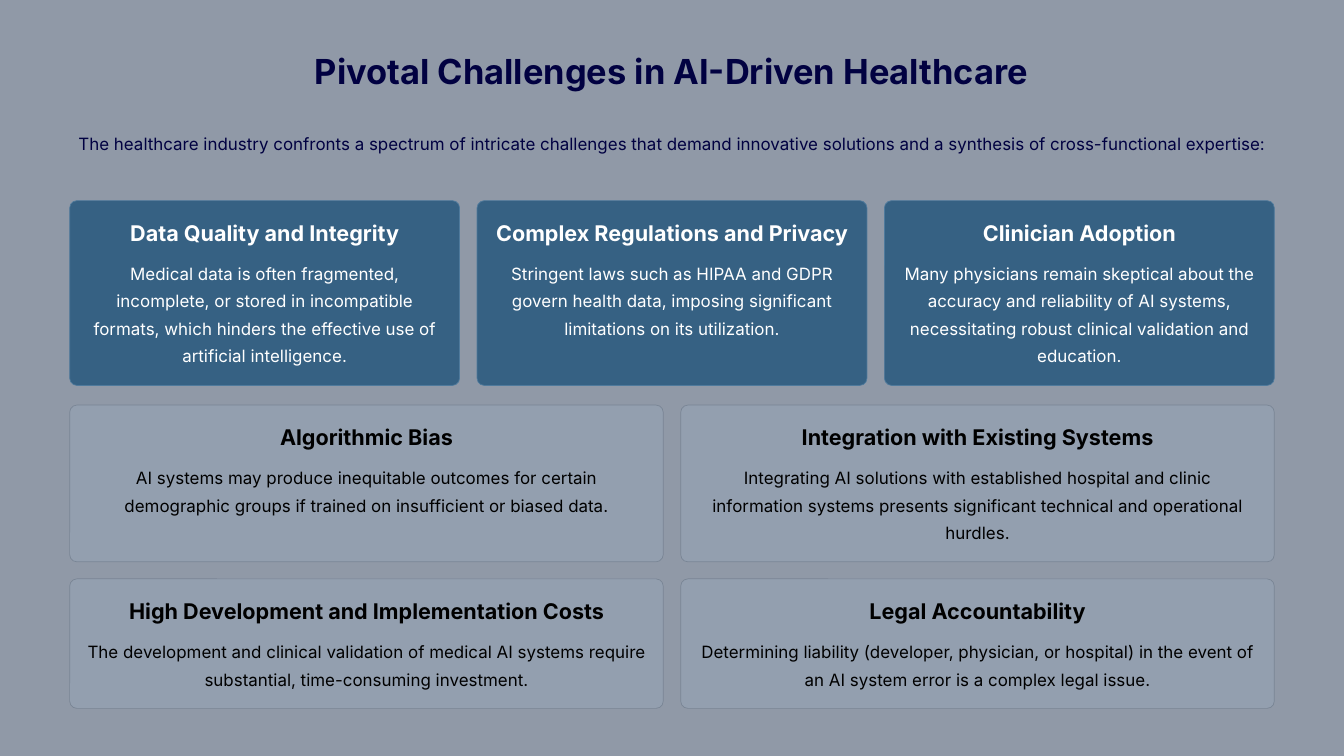
from dataclasses import dataclass

from pptx import Presentation
from pptx.dml.color import RGBColor
from pptx.enum.shapes import MSO_SHAPE as Preset
from pptx.enum.text import MSO_ANCHOR as Anchor, PP_ALIGN as Align
from pptx.slide import Slide
from pptx.util import Pt

# Lengths in points
SLIDE_WIDTH, SLIDE_HEIGHT = 1152, 648
LEFT, CONTENT_WIDTH = 59.75, 1032.5
GAP, INSET, RADIUS = 15, 15.25, 6.2
HEADING_OFFSET, DETAIL_OFFSET = 15.75, 47.75
NAVY = "010141"


@dataclass(frozen=True)
class Palette:
    fill: str
    line: str
    text: str


@dataclass(frozen=True)
class Challenge:
    heading: str
    detail: str


@dataclass(frozen=True)
class Row:
    top: float
    height: float
    palette: Palette
    challenges: tuple[Challenge, ...]


BLUE = Palette("366183", "4F7A9C", "FFFFFF")
GREY = Palette("939FAF", "798595", "000000")

ROWS = (
    Row(172, 158.4, BLUE, (
        Challenge("Data Quality and Integrity",
                  "Medical data is often fragmented, incomplete, or stored in incompatible "
                  "formats, which hinders the effective use of artificial intelligence."),
        Challenge("Complex Regulations and Privacy",
                  "Stringent laws such as HIPAA and GDPR govern health data, imposing "
                  "significant limitations on its utilization."),
        Challenge("Clinician Adoption",
                  "Many physicians remain skeptical about the accuracy and reliability of AI "
                  "systems, necessitating robust clinical validation and education."),
    )),
    Row(347.2, 134.4, GREY, (
        Challenge("Algorithmic Bias",
                  "AI systems may produce inequitable outcomes for certain demographic groups "
                  "if trained on insufficient or biased data."),
        Challenge("Integration with Existing Systems",
                  "Integrating AI solutions with established hospital and clinic information "
                  "systems presents significant technical and operational hurdles."),
    )),
    Row(496.2, 111, GREY, (
        Challenge("High Development and Implementation Costs",
                  "The development and clinical validation of medical AI systems require "
                  "substantial, time-consuming investment."),
        Challenge("Legal Accountability",
                  "Determining liability (developer, physician, or hospital) in the event of "
                  "an AI system error is a complex legal issue."),
    )),
)


def rgb(value: str) -> RGBColor:
    return RGBColor.from_string(value)


def add_text(slide: Slide, text: str, *, left: float, top: float, width: float,
             height: float, color: str, size: float = 14.5, spacing: float = 23.5,
             bold: bool = False, wrap: bool = True) -> None:
    frame = slide.shapes.add_textbox(Pt(left), Pt(top), Pt(width), Pt(height)).text_frame
    frame.margin_left = frame.margin_right = frame.margin_top = frame.margin_bottom = 0
    frame.word_wrap = wrap
    frame.vertical_anchor = Anchor.TOP
    paragraph = frame.paragraphs[0]
    paragraph.alignment = Align.CENTER
    paragraph.line_spacing = Pt(spacing)
    run = paragraph.add_run()
    run.text = text
    run.font.name = "Inter"
    run.font.size = Pt(size)
    run.font.bold = bold
    run.font.color.rgb = rgb(color)


def add_card(slide: Slide, challenge: Challenge, row: Row, left: float, width: float) -> None:
    card = slide.shapes.add_shape(Preset.ROUNDED_RECTANGLE, Pt(left), Pt(row.top),
                                  Pt(width), Pt(row.height))
    card.adjustments[0] = RADIUS / row.height
    card.shadow.inherit = False
    card.fill.solid()
    card.fill.fore_color.rgb = rgb(row.palette.fill)
    card.line.color.rgb = rgb(row.palette.line)
    card.line.width = Pt(0.6)

    inner_left, inner_width = left + INSET, width - 2 * INSET
    add_text(slide, challenge.heading, left=inner_left, top=row.top + HEADING_OFFSET,
             width=inner_width, height=23, color=row.palette.text, size=18.5,
             spacing=23, bold=True, wrap=False)
    add_text(slide, challenge.detail, left=inner_left, top=row.top + DETAIL_OFFSET,
             width=inner_width, height=row.height - DETAIL_OFFSET - INSET,
             color=row.palette.text)


def add_row(slide: Slide, row: Row) -> None:
    count = len(row.challenges)
    width = (CONTENT_WIDTH - GAP * (count - 1)) / count
    for column, challenge in enumerate(row.challenges):
        add_card(slide, challenge, row, LEFT + column * (width + GAP), width)


def main() -> None:
    deck = Presentation()
    deck.slide_width, deck.slide_height = Pt(SLIDE_WIDTH), Pt(SLIDE_HEIGHT)
    slide = deck.slides.add_slide(deck.slide_layouts[6])

    # Background
    slide.background.fill.solid()
    slide.background.fill.fore_color.rgb = rgb("9099A7")

    # Title and introduction
    add_text(slide, "Pivotal Challenges in AI-Driven Healthcare", left=267.85, top=41,
             width=616.3, height=37.5, color=NAVY, size=29.5, spacing=37, bold=True,
             wrap=False)
    add_text(slide, "The healthcare industry confronts a spectrum of intricate challenges "
             "that demand innovative solutions and a synthesis of cross-functional "
             "expertise:", left=LEFT, top=108, width=CONTENT_WIDTH, height=47.5, color=NAVY)

    # Challenge cards
    for row in ROWS:
        add_row(slide, row)

    deck.save("out.pptx")


if __name__ == "__main__":
    main()
